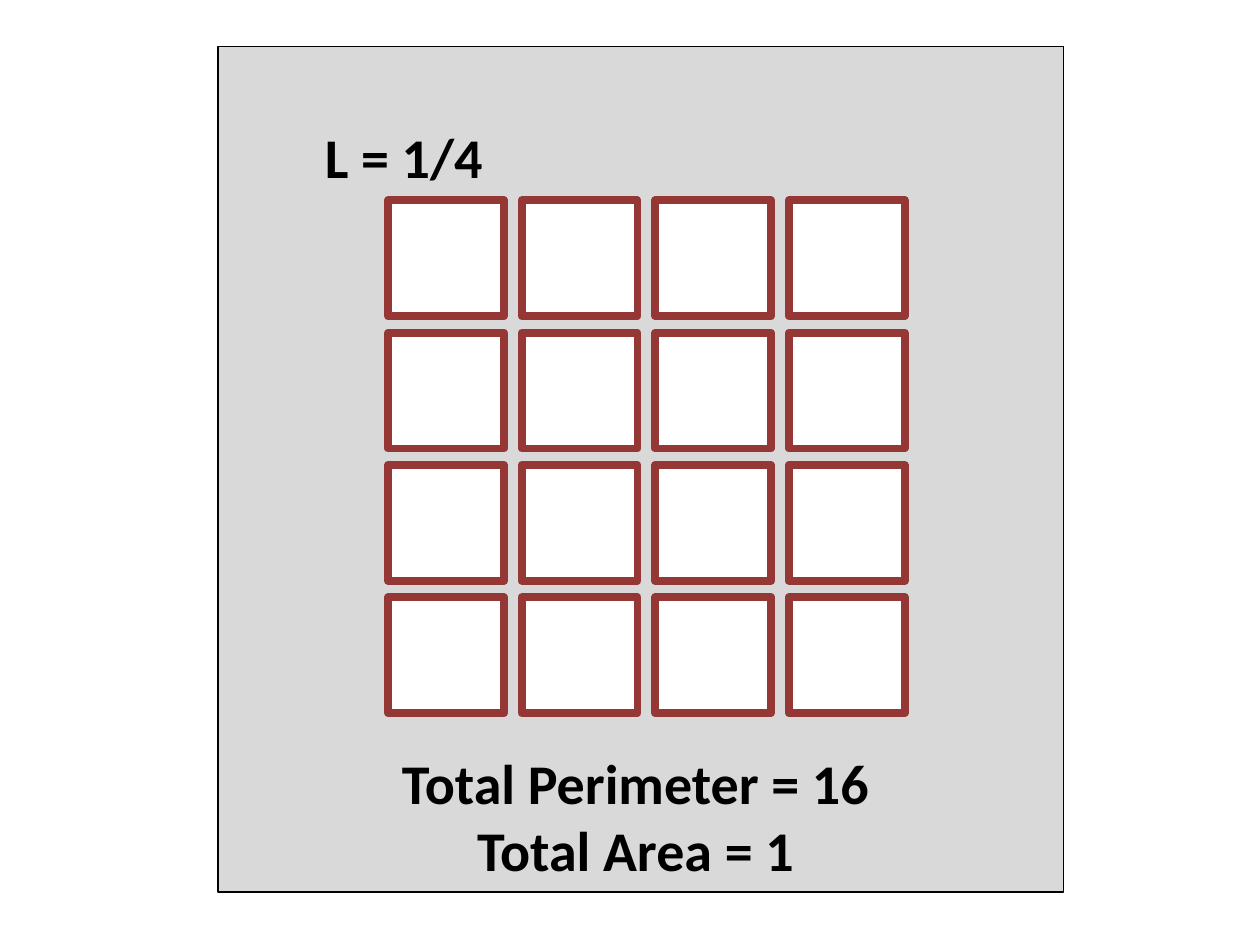
"""Build a slide showing a unit square cut into sixteen quarter-length squares."""
from itertools import product

from pptx import Presentation
from pptx import util as u
from pptx.dml.color import RGBColor
from pptx.enum import shapes, text

BLACK = RGBColor(0x00, 0x00, 0x00)
WHITE = RGBColor(0xFF, 0xFF, 0xFF)
GREY = RGBColor(0xD9, 0xD9, 0xD9)
RED = RGBColor(0x95, 0x37, 0x35)

GRID_LEFT, GRID_TOP = 3.08, 1.59
COLUMN_STEP, ROW_STEP = 1.06, 1.05
CELL_SIDE = 0.92
BLOCK_SPAN = 2


def add_square(parent, left, top, side, fill, outline, weight):
    """Add a filled, outlined square to a slide or group."""
    square = parent.shapes.add_shape(
        shapes.MSO_SHAPE.RECTANGLE, *map(u.Inches, (left, top, side, side)))
    square.shadow.inherit = False
    square.fill.solid()
    square.fill.fore_color.rgb = fill
    square.line.color.rgb = outline
    square.line.width = u.Pt(weight)


def add_block(slide, block_row, block_column):
    """Add one group of two by two cells."""
    block = slide.shapes.add_group_shape()
    for row, column in product(range(BLOCK_SPAN), repeat=2):
        add_square(block,
                   GRID_LEFT + (block_column * BLOCK_SPAN + column) * COLUMN_STEP,
                   GRID_TOP + (block_row * BLOCK_SPAN + row) * ROW_STEP,
                   CELL_SIDE, WHITE, RED, 4.5)


def add_label(slide, wording, left, top, width, height, align):
    """Add a bold label with one paragraph per line of wording."""
    label = slide.shapes.add_textbox(*map(u.Inches, (left, top, width, height)))
    frame = label.text_frame
    frame.text = wording
    frame.word_wrap = False
    frame.auto_size = text.MSO_AUTO_SIZE.SHAPE_TO_FIT_TEXT
    for paragraph in frame.paragraphs:
        paragraph.alignment = align
        for run in paragraph.runs:
            run.font.name = "Calibri"
            run.font.size = u.Pt(32)
            run.font.bold = True
            run.font.color.rgb = BLACK


def main():
    """Build and save the slide."""
    deck = Presentation()
    deck.slide_width, deck.slide_height = u.Inches(10), u.Inches(7.5)
    slide = deck.slides.add_slide(deck.slide_layouts[6])
    add_square(slide, 1.73, 0.37, 6.71, GREY, BLACK, 0.75)
    add_label(slide, "L = 1/4", 2.48, 0.92, 1.6, 0.64, text.PP_ALIGN.LEFT)
    add_label(slide, "Total Perimeter = 16\nTotal Area = 1",
              3.02, 5.89, 4.05, 1.18, text.PP_ALIGN.CENTER)
    for block_row, block_column in product(range(2), repeat=2):
        add_block(slide, block_row, block_column)
    deck.save("out.pptx")


if __name__ == "__main__":
    main()
